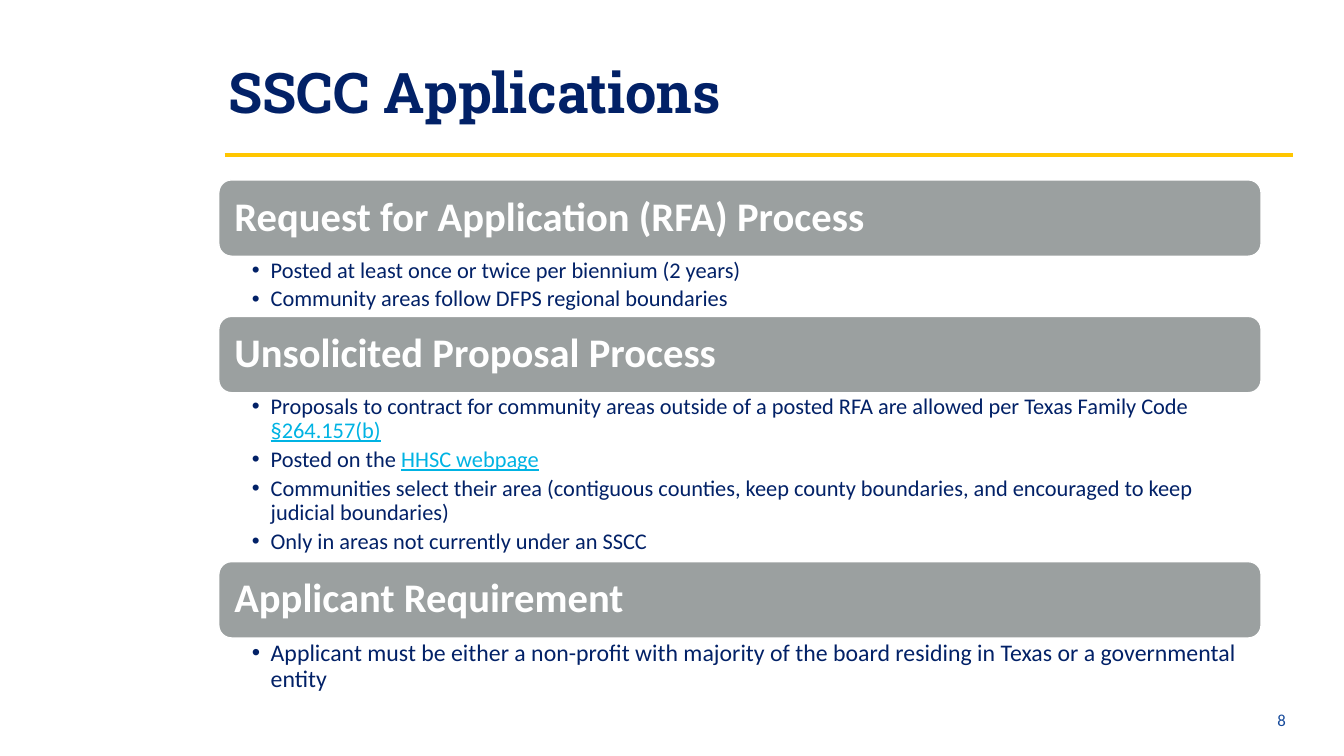
"""Build the SSCC Applications slide."""
from lxml.etree import SubElement
from pptx import Presentation
from pptx.dml.color import RGBColor
from pptx.enum.shapes import MSO_CONNECTOR, MSO_SHAPE
from pptx.enum.text import MSO_ANCHOR, PP_ALIGN
from pptx.oxml.ns import qn
from pptx.util import Pt

NAVY, BLUE, CYAN = "022167", "164A9B", "00B3E3"
GRAY, GOLD, WHITE = "9BA0A0", "FFC600", "FFFFFF"
LEFT, WIDTH, BAR_HEIGHT = 156.3, 744.5, 54.5


def color(value):
    return RGBColor.from_string(value)


def write(paragraph, text, size=16, fill=NAVY, font="Calibri", bold=False,
          underline=False, align=PP_ALIGN.LEFT):
    paragraph.alignment = align
    paragraph.line_spacing = 0.9
    run = paragraph.add_run()
    run.text = text
    run.font.name = font
    run.font.size = Pt(size)
    run.font.bold = bold
    run.font.underline = underline
    run.font.color.rgb = color(fill)


sections = [
    ("Request for Application (RFA) Process", 128.5, 42.5, 16, [
        [("Posted at least once or twice per biennium (2 years)", False)],
        [("Community areas follow DFPS regional boundaries", False)],
    ]),
    ("Unsolicited Proposal Process", 226, 120, 16, [
        [("Proposals to contract for community areas outside of a posted RFA "
          "are allowed per Texas Family Code ", False), ("§264.157(b)", True)],
        [("Posted on the ", False), ("HHSC webpage", True)],
        [("Communities select their area (contiguous counties, keep county "
          "boundaries, and encouraged to keep judicial boundaries)", False)],
        [("Only in areas not currently under an SSCC", False)],
    ]),
    ("Applicant Requirement", 401.2, 41, 17, [
        [("Applicant must be either a non-profit with majority of the board "
          "residing in Texas or a governmental entity", False)],
    ]),
]

presentation = Presentation()
presentation.slide_width = Pt(960)
presentation.slide_height = Pt(540)
slide = presentation.slides.add_slide(presentation.slide_layouts[5])

title = slide.shapes.title
title.left, title.top, title.width, title.height = Pt(LEFT), Pt(43), Pt(763), Pt(62.5)
title.text_frame.vertical_anchor = MSO_ANCHOR.TOP
write(title.text_frame.paragraphs[0], "SSCC Applications", size=40,
      font="Roboto Slab", bold=True)

rule = slide.shapes.add_connector(
    MSO_CONNECTOR.STRAIGHT, Pt(160.5), Pt(110.8), Pt(923.5), Pt(110.8))
rule.line.color.rgb = color(GOLD)
rule.line.width = Pt(3)
SubElement(rule._element.spPr, qn("a:effectLst"))

for heading, top, body_height, body_size, bullets in sections:
    bar = slide.shapes.add_shape(
        MSO_SHAPE.ROUNDED_RECTANGLE, Pt(LEFT), Pt(top), Pt(WIDTH), Pt(BAR_HEIGHT))
    bar.shadow.inherit = False
    bar.fill.solid()
    bar.fill.fore_color.rgb = color(GRAY)
    bar.line.color.rgb = color(WHITE)
    bar.line.width = Pt(1)
    bar_frame = bar.text_frame
    bar_frame.vertical_anchor = MSO_ANCHOR.MIDDLE
    bar_frame.margin_left = Pt(8.5)
    write(bar_frame.paragraphs[0], heading, size=29, fill=WHITE, bold=True)

    body = slide.shapes.add_textbox(
        Pt(LEFT), Pt(top + BAR_HEIGHT + 0.5), Pt(WIDTH), Pt(body_height))
    body_frame = body.text_frame
    body_frame.word_wrap = True
    body_frame.margin_left, body_frame.margin_right = Pt(23.6), Pt(9)
    body_frame.margin_top = body_frame.margin_bottom = Pt(1.5)
    for index, runs in enumerate(bullets):
        paragraph = body_frame.add_paragraph() if index else body_frame.paragraphs[0]
        paragraph.level = 1
        properties = paragraph._p.get_or_add_pPr()
        properties.set("marL", str(Pt(13.5)))
        properties.set("indent", str(Pt(-13.5)))
        SubElement(properties, qn("a:buFont"), typeface="Arial")
        SubElement(properties, qn("a:buChar"), char="•")
        paragraph.space_after = Pt(3.2)
        for text, is_link in runs:
            write(paragraph, text, size=body_size,
                  fill=CYAN if is_link else NAVY, underline=is_link)

page_number = slide.shapes.add_textbox(Pt(868.5), Pt(500.5), Pt(57), Pt(28.8))
page_number.text_frame.word_wrap = True
page_number.text_frame.vertical_anchor = MSO_ANCHOR.MIDDLE
write(page_number.text_frame.paragraphs[0], "8", size=12, fill=BLUE,
      align=PP_ALIGN.RIGHT)

presentation.save("out.pptx")
